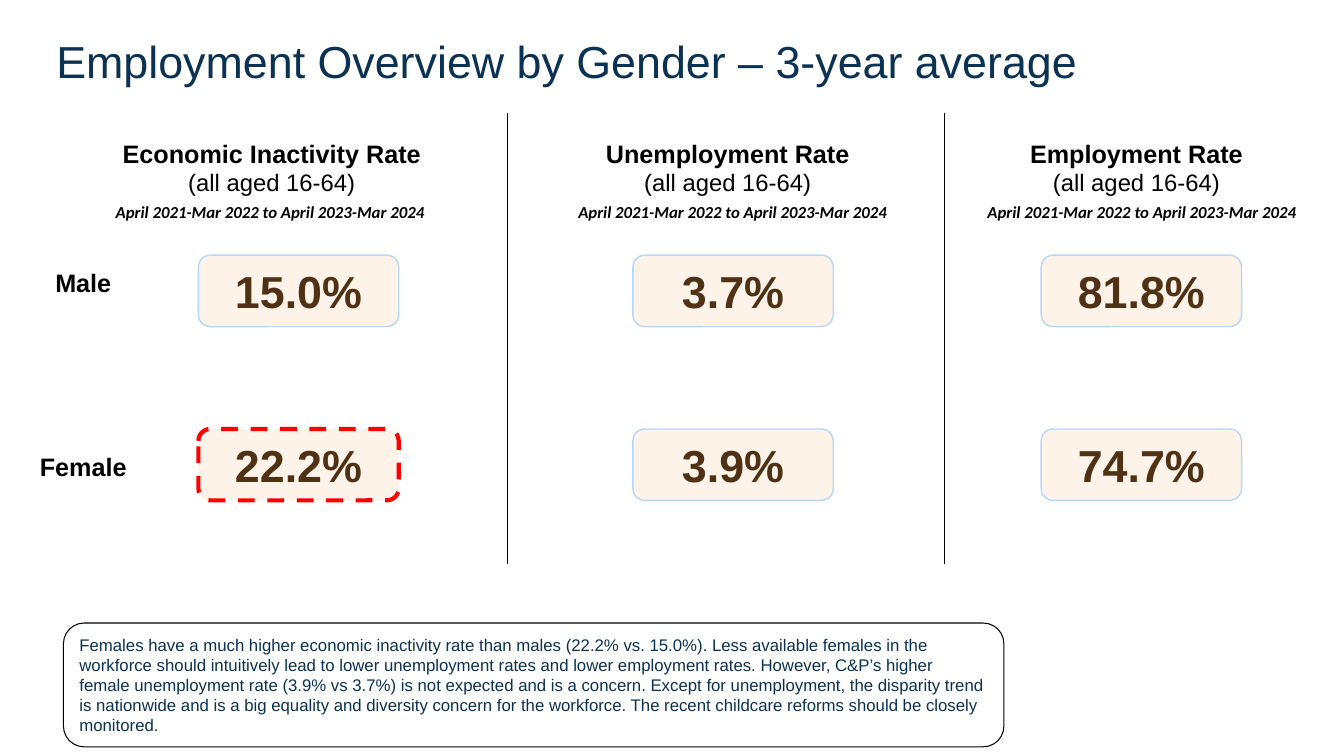
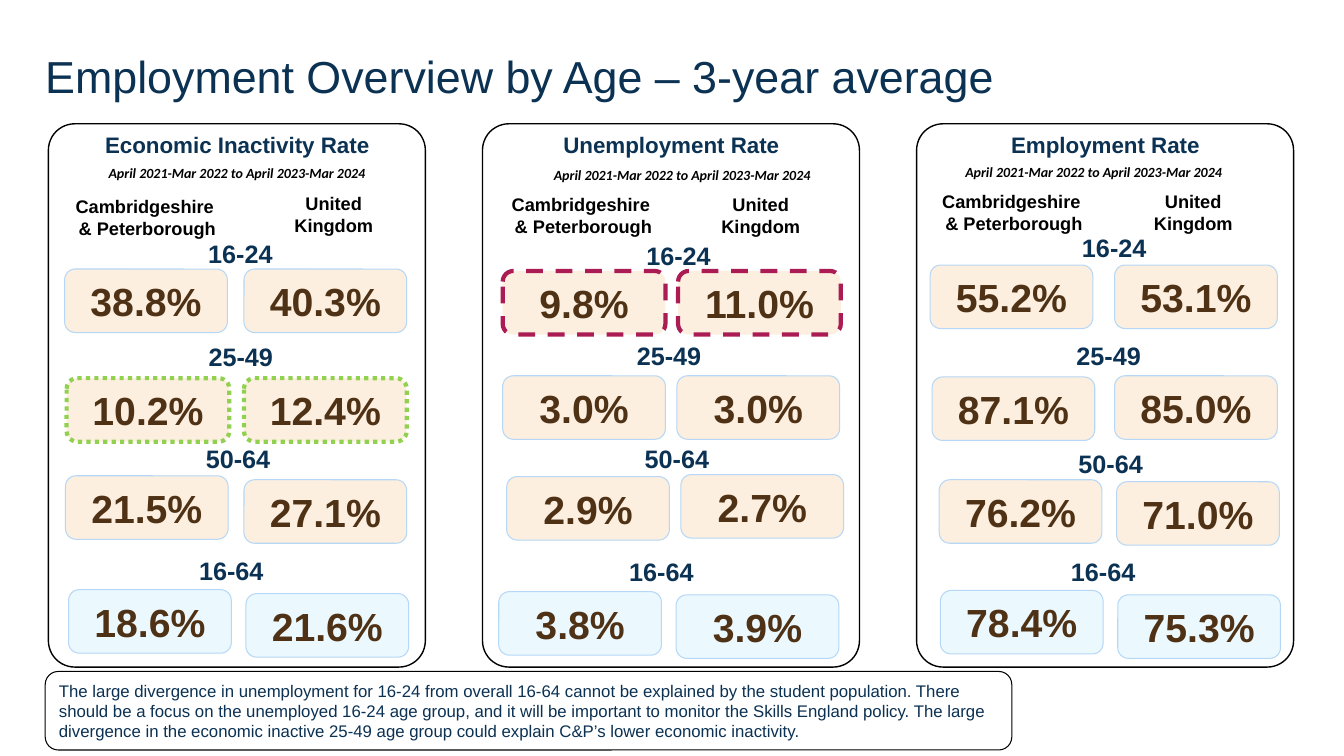
from dataclasses import dataclass
from typing import NamedTuple

from lxml import etree
from pptx import Presentation
from pptx import util as u
from pptx.dml.color import RGBColor
from pptx.enum import dml, shapes, text
from pptx.oxml.ns import qn


class Style(NamedTuple):
    size: int
    color: str
    bold: bool = True
    italic: bool = False
    font: str = "Arial"


class Outline(NamedTuple):
    color: str
    width: float
    dash: object = None


class Fill(NamedTuple):
    color: str
    opacity: int


@dataclass(frozen=True)
class Theme:
    # Type
    title: Style = Style(32, "0B3153", False)
    note: Style = Style(12, "0B3153", False)
    column_name: Style = Style(18, "000000")
    column_scope: Style = Style(17, "000000", False)
    column_period: Style = Style(12, "000000", True, True, "Calibri")
    big_value: Style = Style(32, "4F3215")
    panel_name: Style = Style(16, "0B3153")
    panel_period: Style = Style(10, "000000", True, True, "Calibri")
    region: Style = Style(13, "000000")
    age: Style = Style(18, "0B3153")
    value: Style = Style(28, "4F3215")
    # Fills
    pale: Fill = Fill("FCE8D2", 50)
    peach: Fill = Fill("F9D1A6", 34)
    sky: Fill = Fill("C6EEFF", 34)
    # Outlines
    note_edge: Outline = Outline("000000", 0.75)
    panel_edge: Outline = Outline("000000", 1)
    divider: Outline = Outline("000000", 0.5)
    big_edge: Outline = Outline("B6D7F5", 1)
    edge: Outline = Outline("B6D7F5", 0.75)
    red: Outline = Outline("FF0000", 3, dml.MSO_LINE.DASH)
    green: Outline = Outline("92D050", 3, dml.MSO_LINE.ROUND_DOT)
    crimson: Outline = Outline("AA1C53", 3, dml.MSO_LINE.DASH)


THEME = Theme()
PERIOD = "April 2021-Mar 2022 to April 2023-Mar 2024"
CENTER, LEFT = text.PP_ALIGN.CENTER, text.PP_ALIGN.LEFT
MIDDLE = text.MSO_ANCHOR.MIDDLE


class Column(NamedTuple):
    name: str
    heading_center: float
    period_center: float
    value_left: float
    male: str
    female: str
    female_edge: Outline = THEME.big_edge


class Band(NamedTuple):
    """One age group; x positions count from the panel's left edge."""
    age: str
    age_center: float
    age_top: float
    local: tuple   # left, top, value
    national: tuple
    edge: Outline = THEME.edge
    fill: Fill = THEME.peach


class Panel(NamedTuple):
    name: str
    period: tuple  # center, top
    local_heading: tuple
    national_heading: tuple
    bands: tuple


COLUMNS = (
    Column("Economic Inactivity Rate", 6.85, 6.81, 5, "15.0%", "22.2%", THEME.red),
    Column("Unemployment Rate", 18.34, 18.47, 15.95, "3.7%", "3.9%"),
    Column("Employment Rate", 28.64, 28.78, 26.24, "81.8%", "74.7%"),
)

PANELS = (
    Panel("Economic Inactivity Rate", (4.75, 4.01), (2.49, 4.8), (7.19, 4.72), (
        Band("16-24", 4.84, 5.87, (0.41, 6.78, "38.8%"), (4.93, 6.78, "40.3%")),
        Band("25-49", 4.85, 8.48, (0.46, 9.53, "10.2%"), (4.93, 9.53, "12.4%"), THEME.green),
        Band("50-64", 4.78, 11.05, (0.43, 11.99, "21.5%"), (4.93, 12.09, "27.1%")),
        Band("16-64", 4.61, 13.87, (0.51, 14.86, "18.6%"), (4.98, 14.96, "21.6%"),
             fill=THEME.sky),
    )),
    Panel("Unemployment Rate", (5.03, 4.06), (2.54, 4.75), (7.01, 4.75), (
        Band("16-24", 4.94, 5.94, (0.51, 6.83, "9.8%"), (4.93, 6.83, "11.0%"), THEME.crimson),
        Band("25-49", 4.7, 8.46, (0.51, 9.47, "3.0%"), (4.9, 9.47, "3.0%")),
        Band("50-64", 4.9, 11.05, (0.61, 12.01, "2.9%"), (5, 11.96, "2.7%")),
        Band("16-64", 4.51, 13.89, (0.41, 14.91, "3.8%"), (4.88, 14.99, "3.9%"),
             fill=THEME.sky),
    )),
    Panel("Employment Rate", (4.46, 3.99), (2.45, 4.67), (6.97, 4.67), (
        Band("16-24", 4.98, 5.74, (0.34, 6.68, "55.2%"), (4.99, 6.68, "53.1%")),
        Band("25-49", 4.84, 8.46, (0.39, 9.5, "87.1%"), (4.99, 9.47, "85.0%")),
        Band("50-64", 4.89, 11.18, (0.57, 12.09, "76.2%"), (5.04, 12.14, "71.0%")),
        Band("16-64", 4.7, 13.89, (0.6, 14.88, "78.4%"), (5.07, 14.99, "75.3%"),
             fill=THEME.sky),
    )),
)


def place(left, top, width, height):
    return u.Cm(left), u.Cm(top), u.Cm(width), u.Cm(height)


def write(box, lines, align, anchor):
    """Fill a box with one paragraph per (words, style) pair."""
    frame = box.text_frame
    frame.word_wrap = True
    frame.vertical_anchor = anchor
    for index, (words, style) in enumerate(lines):
        para = frame.paragraphs[0] if index == 0 else frame.add_paragraph()
        para.alignment = align
        span = para.add_run()
        span.text = words
        span.font.name = style.font
        span.font.size = u.Pt(style.size)
        span.font.bold = style.bold
        span.font.italic = style.italic
        span.font.color.rgb = RGBColor.from_string(style.color)


def draw_outline(line, outline):
    line.color.rgb = RGBColor.from_string(outline.color)
    line.width = u.Pt(outline.width)
    if outline.dash is not None:
        line.dash_style = outline.dash


def add_label(page, center, top, width, height, *lines):
    box = page.shapes.add_textbox(*place(center - width / 2, top, width, height))
    write(box, lines, CENTER, text.MSO_ANCHOR.TOP)


def add_title(page, words, left, top):
    box = page.shapes.add_textbox(*place(left, top, 30, 1.52))
    write(box, [(words, THEME.title)], LEFT, text.MSO_ANCHOR.BOTTOM)
    frame = box.text_frame
    frame.margin_left = frame.margin_top = frame.margin_right = frame.margin_bottom = 0
    frame.paragraphs[0].line_spacing = 0.9


def add_rounded(page, area, outline, fill=None):
    box = page.shapes.add_shape(shapes.MSO_SHAPE.ROUNDED_RECTANGLE, *place(*area))
    box.shadow.inherit = False
    draw_outline(box.line, outline)
    if fill is None:
        box.fill.background()
    else:
        box.fill.solid()
        box.fill.fore_color.rgb = RGBColor.from_string(fill.color)
        color = box.fill._xPr.find(qn("a:solidFill"))[0]
        etree.SubElement(color, qn("a:alpha")).set("val", str(fill.opacity * 1000))
    return box


def add_value(page, area, words, style, outline, fill):
    write(add_rounded(page, area, outline, fill), [(words, style)], CENTER, MIDDLE)


def add_note(page, area, words):
    write(add_rounded(page, area, THEME.note_edge), [(words, THEME.note)], LEFT, MIDDLE)


def add_divider(page, x, top, bottom):
    line = page.shapes.add_connector(
        shapes.MSO_CONNECTOR.STRAIGHT, u.Cm(x), u.Cm(top), u.Cm(x), u.Cm(bottom))
    draw_outline(line.line, THEME.divider)
    etree.SubElement(line._element.spPr, qn("a:effectLst"))


def add_column(page, column):
    add_label(page, column.heading_center, 3.35, 10, 1.8,
              (column.name, THEME.column_name), ("(all aged 16-64)", THEME.column_scope))
    add_label(page, column.period_center, 4.95, 10, 0.76, (PERIOD, THEME.column_period))
    for top, words, edge in ((6.43, column.male, THEME.big_edge),
                             (10.81, column.female, column.female_edge)):
        add_value(page, (column.value_left, top, 5.05, 1.8), words,
                  THEME.big_value, edge, THEME.pale)


def add_panel(page, left, panel):
    box = add_rounded(page, (left, 3.12, 9.5, 13.69), THEME.panel_edge)
    box.adjustments[0] = 0.07

    # Headings
    add_label(page, left + 4.76, 3.18, 8.6, 0.94, (panel.name, THEME.panel_name))
    center, top = panel.period
    add_label(page, left + center, top, 9.5, 0.69, (PERIOD, THEME.panel_period))
    center, top = panel.local_heading
    add_label(page, left + center, top, 5.33, 1.37,
              ("Cambridgeshire ", THEME.region), ("& Peterborough", THEME.region))
    center, top = panel.national_heading
    add_label(page, left + center, top, 3.8, 1.37, ("United Kingdom", THEME.region))

    # Age groups
    for band in panel.bands:
        add_label(page, left + band.age_center, band.age_top, 2.5, 1, (band.age, THEME.age))
        for x, y, words in (band.local, band.national):
            add_value(page, (left + x, y, 4.1, 1.6), words, THEME.value, band.edge, band.fill)


def build_gender_page(page):
    add_title(page, "Employment Overview by Gender – 3-year average", 1.42, 0.71)
    for column in COLUMNS:
        add_column(page, column)
    for x in (12.78, 23.8):
        add_divider(page, x, 2.84, 14.2)
    for name, top in (("Male", 6.6), ("Female", 11.25)):
        add_label(page, 2.1, top, 3, 1, (name, THEME.column_name))
    add_note(page, (1.6, 15.7, 23.7, 3.12),
             "Females have a much higher economic inactivity rate than males (22.2% vs. 15.0%). "
             "Less available females in the workforce should intuitively lead to lower "
             "unemployment rates and lower employment rates. However, C&P’s higher female "
             "unemployment rate (3.9% vs 3.7%) is not expected and is a concern. Except for "
             "unemployment, the disparity trend is nationwide and is a big equality and "
             "diversity concern for the workforce. The recent childcare reforms should be "
             "closely monitored.")


def build_age_page(page):
    add_title(page, "Employment Overview by Age – 3-year average", 1.14, 1.07)
    for index, panel in enumerate(PANELS):
        add_panel(page, 1.22 + 10.94 * index, panel)
    add_note(page, (1.14, 16.92, 24.36, 1.98),
             "The large divergence in unemployment for 16-24 from overall 16-64 cannot be "
             "explained by the student population. There should be a focus on the unemployed "
             "16-24 age group, and it will be important to monitor the Skills England policy. "
             "The large divergence in the economic inactive 25-49 age group could explain "
             "C&P’s lower economic inactivity.")


def main():
    deck = Presentation()
    deck.slide_width, deck.slide_height = u.Cm(33.87), u.Cm(19.05)
    for build in (build_gender_page, build_age_page):
        build(deck.slides.add_slide(deck.slide_layouts[6]))
    deck.save("out.pptx")


if __name__ == "__main__":
    main()
